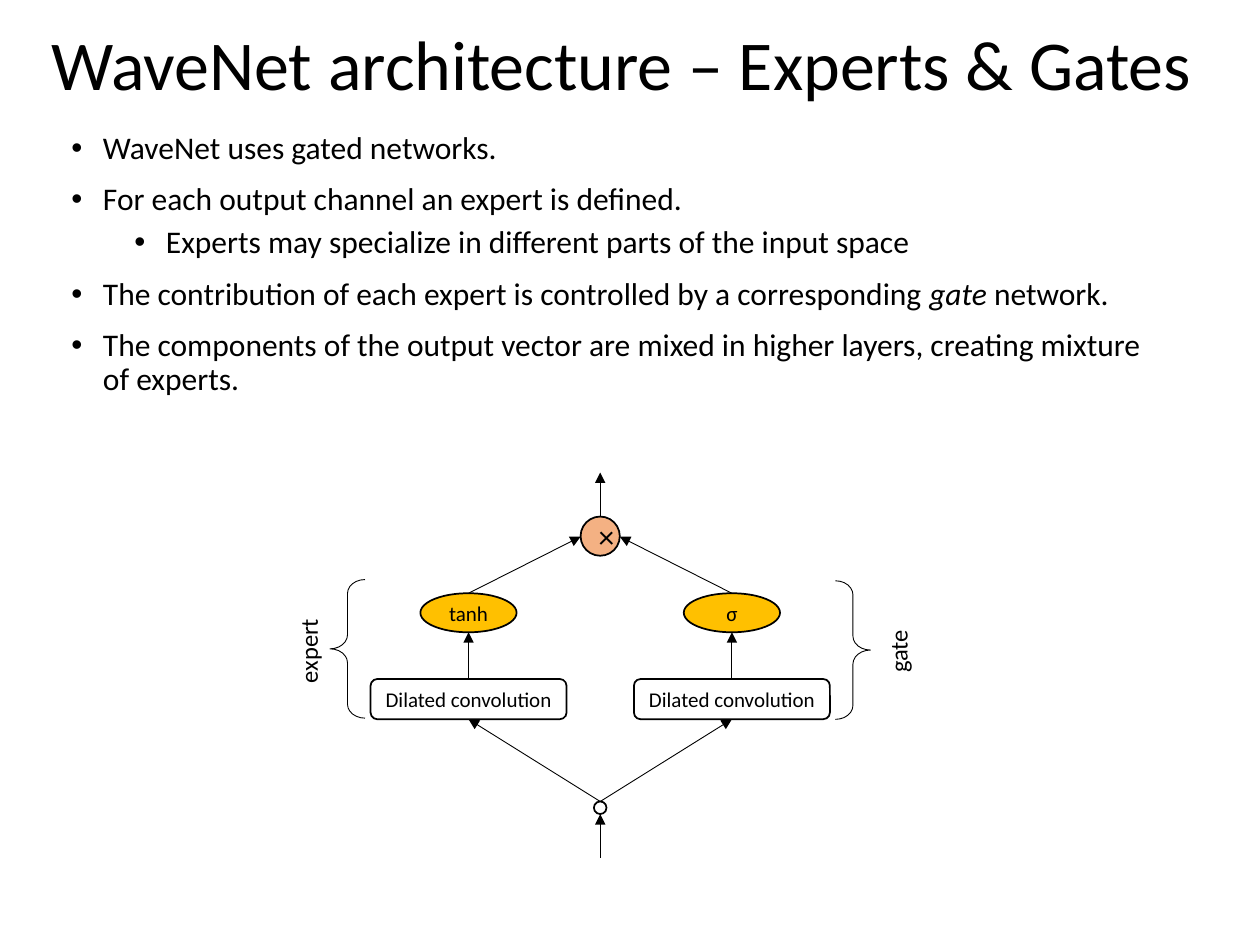
from lxml import etree
from pptx import Presentation
from pptx.dml.color import RGBColor
from pptx.enum import shapes as sh, text as tx
from pptx.oxml import ns
from pptx.util import Pt

BLACK = RGBColor(0, 0, 0)
WHITE = RGBColor(255, 255, 255)
GOLD = RGBColor(0xFF, 0xC0, 0x00)
PEACH = RGBColor(0xF4, 0xB1, 0x83)
KIND = sh.MSO_SHAPE
LEFT, MID = tx.PP_ALIGN.LEFT, tx.PP_ALIGN.CENTER
POINTS = [
    (0, "WaveNet uses gated networks."),
    (0, "For each output channel an expert is defined."),
    (1, "Experts may specialize in different parts of the input space"),
    (0, "The contribution of each expert is controlled by a corresponding *gate* network."),
    (0, "The components of the output vector are mixed in higher layers, creating mixture of experts."),
]


def style(para, size, align):
    """Format a paragraph and all of its runs."""
    para.alignment = align
    for run in para.runs:
        run.font.size = Pt(size)
        run.font.name = "Calibri"
        run.font.color.rgb = BLACK


def add_title(slide, box, words):
    """Place and format the title."""
    title = slide.shapes.title
    title.left, title.top, title.width, title.height = map(Pt, box)
    frame = title.text_frame
    frame.text = words
    frame.auto_size = tx.MSO_AUTO_SIZE.NONE
    frame.vertical_anchor = tx.MSO_ANCHOR.MIDDLE
    frame.paragraphs[0].line_spacing = 0.9
    style(frame.paragraphs[0], 40, LEFT)


def add_list(slide, box, points):
    """Write a bulleted list; words between asterisks are italic."""
    frame = slide.shapes.add_textbox(*map(Pt, box)).text_frame
    frame.word_wrap = True
    for i, (level, words) in enumerate(points):
        para = frame.add_paragraph() if i else frame.paragraphs[0]
        for j, part in enumerate(words.split("*")):
            run = para.add_run()
            run.text = part
            run.font.italic = j % 2 == 1
        para.level = level
        para.line_spacing = 0.9
        para.space_before = Pt(5 if level else 10)
        style(para, 18, LEFT)
        props = para._p.get_or_add_pPr()
        props.set("marL", str(Pt(18 + 36 * level)))
        props.set("indent", str(Pt(-18)))
        etree.SubElement(props, ns.qn("a:buFont"), typeface="Arial")
        etree.SubElement(props, ns.qn("a:buChar"), char="•")


def add_node(slide, kind, box, fill=None, words="", size=12, line=1):
    """Add an outlined shape with optional fill and centred words."""
    node = slide.shapes.add_shape(kind, *map(Pt, box))
    node.shadow.inherit = False
    if fill is None:
        node.fill.background()
    else:
        node.fill.solid()
        node.fill.fore_color.rgb = fill
    node.line.color.rgb = BLACK
    node.line.width = Pt(line)
    if words:
        node.text_frame.text = words
        node.text_frame.vertical_anchor = tx.MSO_ANCHOR.MIDDLE
        style(node.text_frame.paragraphs[0], size, MID)
    return node


def add_arrow(slide, start, end):
    """Draw a thin arrow from start to end."""
    arrow = slide.shapes.add_connector(
        sh.MSO_CONNECTOR.STRAIGHT, *map(Pt, start + end))
    arrow.line.color.rgb = BLACK
    arrow.line.width = Pt(0.5)
    line = arrow.line._get_or_add_ln()
    etree.SubElement(line, ns.qn("a:tailEnd"), type="triangle")
    etree.SubElement(arrow._element.spPr, ns.qn("a:effectLst"))


def add_side(slide, kind, left, top, mid, words, align):
    """Add a brace and its upright label, centred on mid."""
    brace = add_node(slide, kind, (left, top, 20, 79.2), line=0.5)
    brace.adjustments[0] = 0.4
    x, y = mid
    label = slide.shapes.add_textbox(*map(Pt, (x - 31, y - 12.25, 62, 24.5)))
    label.rotation = 270
    label.text_frame.word_wrap = True
    label.text_frame.text = words
    style(label.text_frame.paragraphs[0], 14, align)


def add_gates(slide, box):
    """Draw the gated unit from its input at the foot to its output on top."""
    left, top, wide, high = box
    mid = left + wide / 2
    mix, act, conv, join = (top + y for y in (25.2, 69, 118, 188))
    for side, words in ((-1, "tanh"), (1, "σ")):
        x = mid + side * 75.25
        add_node(slide, KIND.ROUNDED_RECTANGLE, (x - 56, conv, 112, 23),
                 WHITE, "Dilated convolution")
        add_node(slide, KIND.OVAL, (x - 27.5, act, 55, 22.3), GOLD, words)
        add_arrow(slide, (x, conv), (x, act + 22.3))
        add_arrow(slide, (x, act), (mid + side * 11.2, mix + 11.5))
        add_arrow(slide, (mid, join), (x, conv + 23))
    add_node(slide, KIND.OVAL, (mid - 11.2, mix, 22.4, 22.4), PEACH, "×", 18)
    add_node(slide, KIND.OVAL, (mid - 3.6, join, 7.2, 7.2), WHITE)
    add_arrow(slide, (mid, top + high), (mid, join + 7.2))
    add_arrow(slide, (mid, mix), (mid, top))
    add_side(slide, KIND.LEFT_BRACE, left + 23.6, top + 61.2,
             (left + 11.4, top + 96.5), "expert", LEFT)
    add_side(slide, KIND.RIGHT_BRACE, left + 312.4, top + 61.9,
             (left + 348.4, top + 102.2), "gate", MID)


def main():
    """Build and save the slide."""
    deck = Presentation()
    deck.slide_width, deck.slide_height = Pt(720), Pt(540)
    slide = deck.slides.add_slide(deck.slide_layouts[5])
    add_title(slide, (22.3, 11.5, 677, 54.7),
              "WaveNet architecture – Experts & Gates")
    add_list(slide, (33.8, 72, 637, 160.5), POINTS)
    add_gates(slide, (165, 270, 356, 220.3))
    deck.save("out.pptx")


if __name__ == "__main__":
    main()
